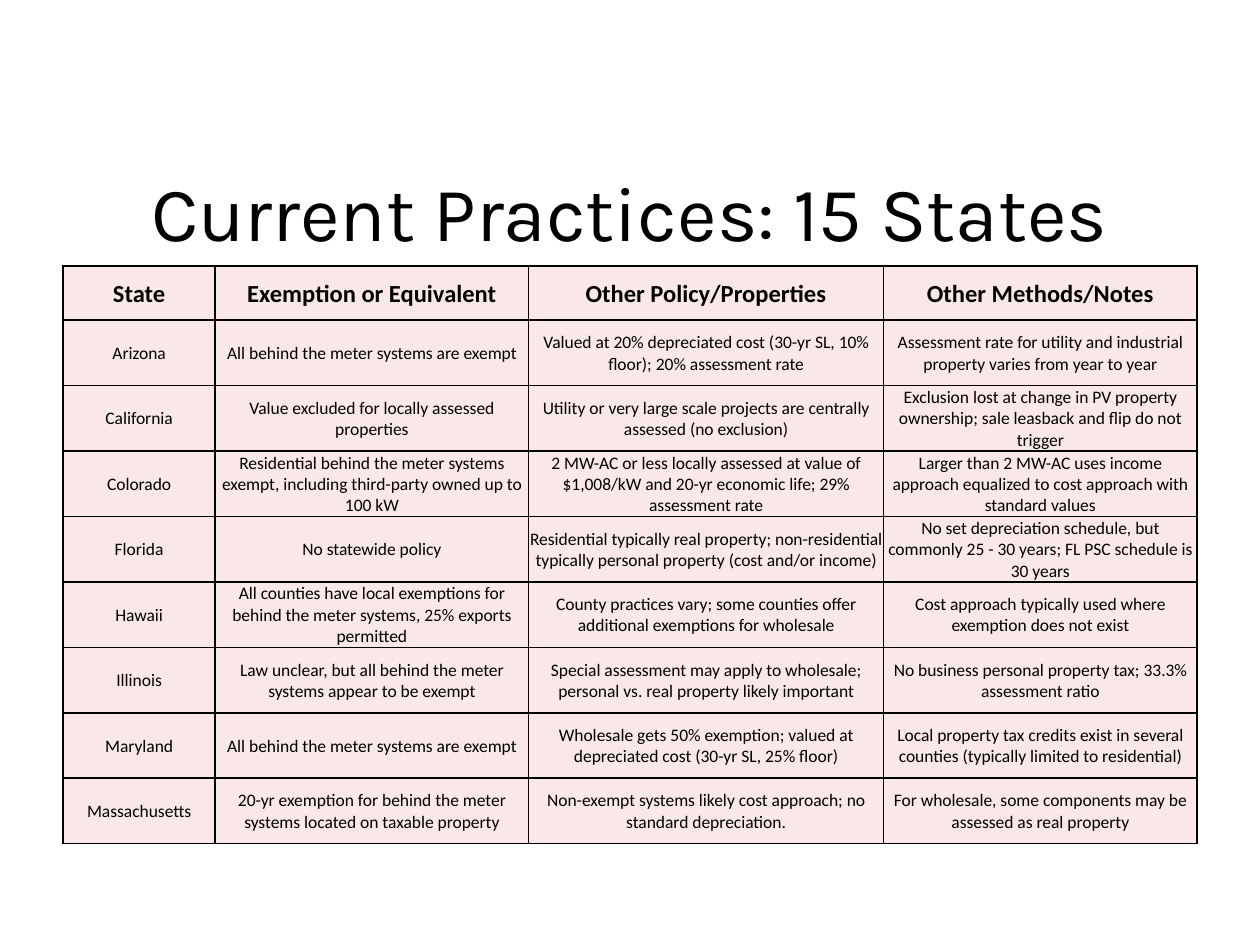
from dataclasses import dataclass
from typing import NamedTuple

from lxml import etree
from pptx import Presentation
from pptx import util as u
from pptx.dml import color
from pptx.enum import text
from pptx.oxml import ns


@dataclass(frozen=True)
class Theme:
    ink: str = "000000"
    cell: str = "F9E8E7"
    title_font: str = "Karla"
    body_font: str = "Calibri"
    title_size: float = 44
    header_size: float = 14
    body_size: float = 10
    border: float = 1
    inset: float = 0.72


class StatePractice(NamedTuple):
    state: str
    exemption: str
    policy: str
    notes: str


class Box(NamedTuple):
    left: float
    top: float
    width: float
    height: float


THEME = Theme()
TITLE_BOX = Box(36, 84.24, 648, 72)
TABLE_LEFT, TABLE_TOP = 36, 152
COLUMN_WIDTHS = (87, 179, 203, 179)
HEADER_HEIGHT, ROW_HEIGHT = 31, 37.4

HEADER = StatePractice("State", "Exemption or Equivalent", "Other Policy/Properties", "Other Methods/Notes")
PRACTICES = (
    StatePractice(
        "Arizona",
        "All behind the meter systems are exempt",
        "Valued at 20% depreciated cost (30-yr SL, 10% floor); 20% assessment rate",
        "Assessment rate for utility and industrial property varies from year to year",
    ),
    StatePractice(
        "California",
        "Value excluded for locally assessed properties",
        "Utility or very large scale projects are centrally assessed (no exclusion)",
        "Exclusion lost at change in PV property ownership; sale leasback and flip do not trigger",
    ),
    StatePractice(
        "Colorado",
        "Residential behind the meter systems exempt, including third-party owned up to 100 kW",
        "2 MW-AC or less locally assessed at value of $1,008/kW and 20-yr economic life; 29% assessment rate",
        "Larger than 2 MW-AC uses income approach equalized to cost approach with standard values",
    ),
    StatePractice(
        "Florida",
        "No statewide policy",
        "Residential typically real property; non-residential typically personal property (cost and/or income)",
        "No set depreciation schedule, but commonly 25 - 30 years; FL PSC schedule is 30 years",
    ),
    StatePractice(
        "Hawaii",
        "All counties have local exemptions for behind the meter systems, 25% exports permitted",
        "County practices vary; some counties offer additional exemptions for wholesale",
        "Cost approach typically used where exemption does not exist",
    ),
    StatePractice(
        "Illinois",
        "Law unclear, but all behind the meter systems appear to be exempt",
        "Special assessment may apply to wholesale; personal vs. real property likely important",
        "No business personal property tax; 33.3% assessment ratio",
    ),
    StatePractice(
        "Maryland",
        "All behind the meter systems are exempt",
        "Wholesale gets 50% exemption; valued at depreciated cost (30-yr SL, 25% floor)",
        "Local property tax credits exist in several counties (typically limited to residential)",
    ),
    StatePractice(
        "Massachusetts",
        "20-yr exemption for behind the meter systems located on taxable property",
        "Non-exempt systems likely cost approach; no standard depreciation.",
        "For wholesale, some components may be assessed as real property",
    ),
)


def set_attrs(target, values: dict) -> None:
    for name, value in values.items():
        setattr(target, name, value)


def write(tf, words: str, font: str, size: float, bold: bool = False) -> None:
    p = tf.paragraphs[0]
    p.alignment = text.PP_ALIGN.CENTER
    r = p.add_run()
    r.text = words
    set_attrs(r.font, {"name": font, "size": u.Pt(size), "bold": bold})
    r.font.color.rgb = color.RGBColor.from_string(THEME.ink)


def add_borders(cell) -> None:
    tc_pr = cell._tc.get_or_add_tcPr()
    for side in ("a:lnL", "a:lnR", "a:lnT", "a:lnB"):
        ln = etree.SubElement(tc_pr, ns.qn(side), w=str(u.Pt(THEME.border)))
        fill = etree.SubElement(ln, ns.qn("a:solidFill"))
        etree.SubElement(fill, ns.qn("a:srgbClr"), val=THEME.ink)


def fill_cell(cell, words: str, header: bool) -> None:
    inset = u.Pt(THEME.inset)
    set_attrs(cell, {
        "margin_left": inset,
        "margin_right": inset,
        "margin_top": inset,
        "margin_bottom": 0,
        "vertical_anchor": text.MSO_ANCHOR.MIDDLE,
    })
    add_borders(cell)
    cell.fill.solid()
    cell.fill.fore_color.rgb = color.RGBColor.from_string(THEME.cell)
    size = THEME.header_size if header else THEME.body_size
    write(cell.text_frame, words, THEME.body_font, size, header)


def add_title(s, words: str) -> None:
    sp = s.shapes.add_textbox(*map(u.Pt, TITLE_BOX))
    tf = sp.text_frame
    set_attrs(tf, {"word_wrap": True, "vertical_anchor": text.MSO_ANCHOR.MIDDLE})
    write(tf, words, THEME.title_font, THEME.title_size)


def add_practice_table(s) -> None:
    rows = (HEADER, *PRACTICES)
    heights = [HEADER_HEIGHT] + [ROW_HEIGHT] * len(PRACTICES)
    box = Box(TABLE_LEFT, TABLE_TOP, sum(COLUMN_WIDTHS), sum(heights))
    tbl = s.shapes.add_table(len(rows), len(COLUMN_WIDTHS), *map(u.Pt, box)).table
    set_attrs(tbl, {"first_row": True, "horz_banding": False})
    for column, width in zip(tbl.columns, COLUMN_WIDTHS):
        column.width = u.Pt(width)
    for i, (practice, height) in enumerate(zip(rows, heights)):
        tbl.rows[i].height = u.Pt(height)
        for j, words in enumerate(practice):
            fill_cell(tbl.cell(i, j), words, header=i == 0)


def main() -> None:
    prs = Presentation()
    set_attrs(prs, {"slide_width": u.Pt(720), "slide_height": u.Pt(540)})
    s = prs.slides.add_slide(prs.slide_layouts[6])
    add_title(s, "Current Practices: 15 States")
    add_practice_table(s)
    prs.save("out.pptx")


if __name__ == "__main__":
    main()
